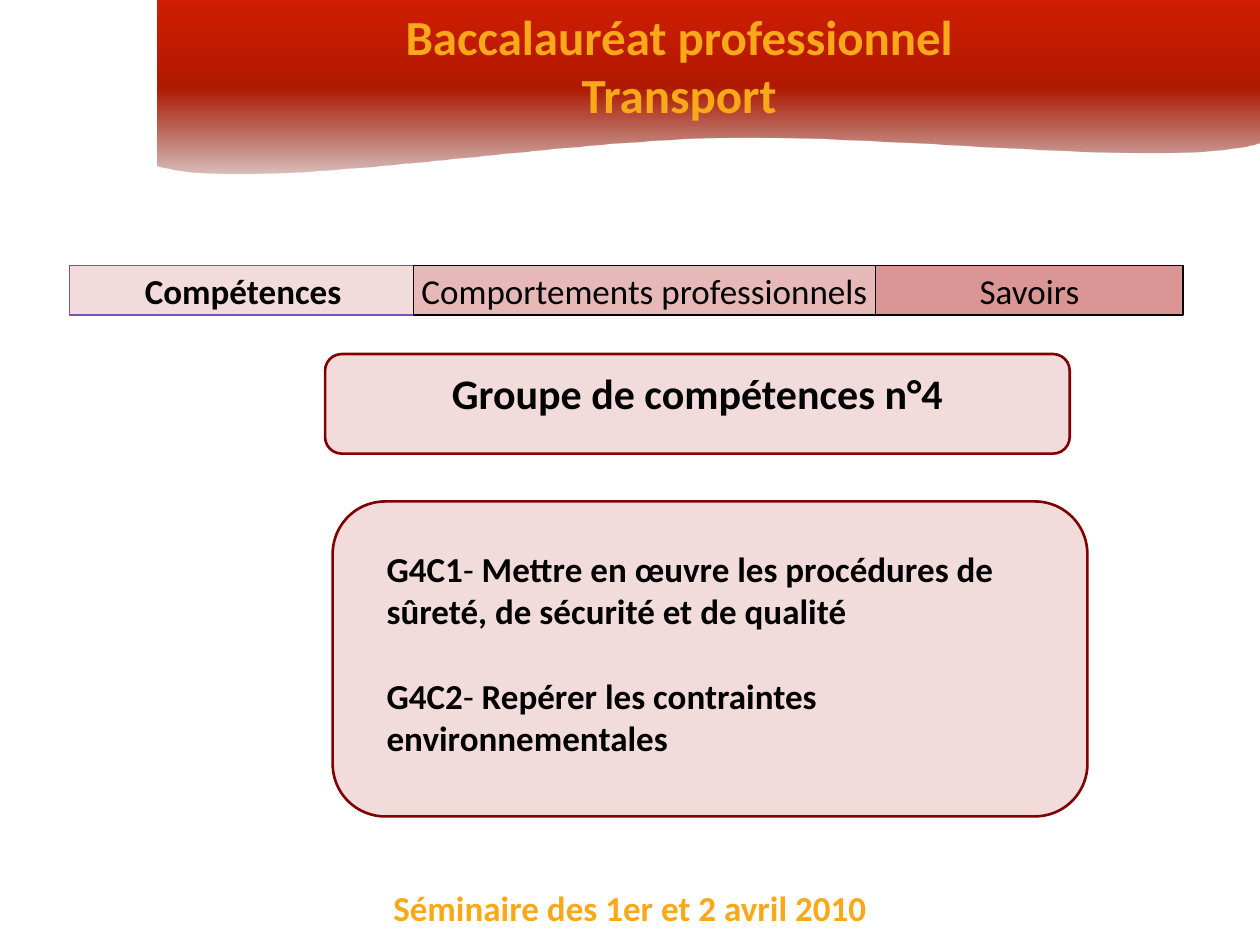
from pptx import Presentation
from pptx.dml.color import RGBColor
from pptx.enum.shapes import MSO_SHAPE as Shape
from pptx.enum.text import MSO_ANCHOR as Anchor, MSO_AUTO_SIZE as AutoSize, PP_ALIGN as Align
from pptx.oxml import parse_xml
from pptx.oxml.ns import nsdecls
from pptx.util import Inches, Pt

GOLD, BLACK, MAROON, PINK = "F8A818", "000000", "800000", "F2DCDB"


def color(value):
    return RGBColor.from_string(value)


def write(shape, paragraphs, size, ink, align=Align.CENTER, gap=0):
    """Each paragraph is a list of (text, bold) runs."""
    frame = shape.text_frame
    for index, runs in enumerate(paragraphs):
        paragraph = frame.add_paragraph() if index else frame.paragraphs[0]
        paragraph.alignment = align
        if index and gap:
            paragraph.space_before = Pt(gap)
        for text, bold in runs:
            run = paragraph.add_run()
            run.text = text
            run.font.name = "Calibri"
            run.font.size = Pt(size)
            run.font.bold = bold
            run.font.color.rgb = color(ink)


def add_box(slide, kind, box, fill, line=None, width=0.75):
    shape = slide.shapes.add_shape(kind, *map(Inches, box))
    shape.shadow.inherit = False
    shape.fill.solid()
    shape.fill.fore_color.rgb = color(fill)
    if line:
        shape.line.color.rgb = color(line)
        shape.line.width = Pt(width)
    else:
        shape.line.fill.background()
    return shape


def add_caption(slide, box, lines, size):
    caption = slide.shapes.add_textbox(*map(Inches, box))
    caption.text_frame.word_wrap = True
    write(caption, [[(line, True)] for line in lines], size, GOLD)


def curve(start, control1, control2, end, steps=40):
    """Points along a cubic Bezier curve, without its start."""
    points = []
    for step in range(1, steps + 1):
        t = step / steps
        weights = ((1 - t) ** 3, 3 * t * (1 - t) ** 2, 3 * t * t * (1 - t), t ** 3)
        ends = zip(start, control1, control2, end)
        points.append(tuple(sum(w * v for w, v in zip(weights, axis)) for axis in ends))
    return points


def add_banner(slide, box):
    left, top, width, height = box
    right, middle = left + width, (left + 4.45, top + 1.09)
    # Straight top and right side, then a wavy lower edge
    edge = [(right, top), (right, top + 1.13)]
    edge += curve(edge[-1], (left + 8.04, top + 1.34), (left + 5.91, top + 1.06), middle)
    edge += curve(middle, (left + 2.99, top + 1.12), (left + 0.74, top + height),
                  (left, top + 1.31))
    builder = slide.shapes.build_freeform(Inches(left), Inches(top))
    builder.add_line_segments([(Inches(x), Inches(y)) for x, y in edge], close=True)
    banner = builder.convert_to_shape()
    banner.shadow.inherit = False
    banner.line.fill.background()
    # Red gradient, fading out at the bottom
    stops = "".join(
        f'<a:gs pos="{pos * 1000}"><a:srgbClr val="{tint}">'
        f'<a:alpha val="{alpha * 1000}"/></a:srgbClr></a:gs>'
        for pos, tint, alpha in [(0, "7B1100", 27), (50, "AF1900", 100), (100, "D01D00", 100)])
    gradient = parse_xml(f'<a:gradFill {nsdecls("a")} rotWithShape="1"><a:gsLst>{stops}</a:gsLst>'
                         '<a:lin ang="16200000" scaled="0"/></a:gradFill>')
    banner.fill.solid()
    properties = banner.element.spPr
    properties.replace(properties.find(".//{*}solidFill"), gradient)


def add_tabs(slide, box):
    left, top, width, height = box
    tabs = [("Savoirs", 6.4, 2.44, "D99694", BLACK, False),
            ("Compétences", 0, 2.76, PINK, "7154B8", True),
            ("Comportements professionnels", 2.73, 3.67, "E6B9B8", BLACK, False)]
    for label, offset, tab_width, fill, line, bold in tabs:
        tab = add_box(slide, Shape.FLOWCHART_PROCESS,
                      (left + offset, top, tab_width, height), fill, line)
        tab.text_frame.word_wrap = False
        tab.text_frame.vertical_anchor = Anchor.MIDDLE
        write(tab, [[(label, bold)]], 20, BLACK)


def add_group_title(slide, box):
    title = add_box(slide, Shape.FLOWCHART_ALTERNATE_PROCESS, box, PINK, MAROON, 1.5)
    frame = title.text_frame
    frame.margin_left = frame.margin_right = Inches(0.07)
    frame.margin_top = frame.margin_bottom = Inches(0.07)
    frame.vertical_anchor = Anchor.TOP
    write(title, [[("Groupe de compétences n°4", True)]], 24, BLACK)


def add_skills(slide, box):
    left, top, _, _ = box
    add_box(slide, Shape.FLOWCHART_ALTERNATE_PROCESS, box, PINK, MAROON, 1.5)
    skills = add_box(slide, Shape.RECTANGLE, (left + 0.33, top + 0.32, 5.34, 1.77), PINK)
    skills.text_frame.word_wrap = True
    skills.text_frame.auto_size = AutoSize.SHAPE_TO_FIT_TEXT
    skills.text_frame.vertical_anchor = Anchor.TOP
    entries = [("G4C1", "Mettre en œuvre les procédures de sûreté, de sécurité et de qualité"),
               ("G4C2", "Repérer les contraintes environnementales")]
    write(skills, [[(code, True), ("- ", False), (skill, True)] for code, skill in entries],
          20, BLACK, Align.LEFT, gap=24)


def main():
    deck = Presentation()
    deck.slide_width, deck.slide_height = Inches(10), Inches(7.5)
    slide = deck.slides.add_slide(deck.slide_layouts[6])
    # Footer and header
    add_caption(slide, (2.5, 6.99, 5, 0.44), ["Séminaire des 1er et 2 avril 2010"], 20)
    add_banner(slide, (1.25, 0, 8.75, 1.53))
    add_caption(slide, (2.89, 0, 5, 1.04), ["Baccalauréat professionnel", "Transport"], 28)
    # Content
    add_tabs(slide, (0.55, 2.11, 8.84, 0.39))
    add_group_title(slide, (2.58, 2.81, 5.91, 0.79))
    add_skills(slide, (2.64, 3.98, 5.99, 2.5))
    deck.save("out.pptx")


if __name__ == "__main__":
    main()
